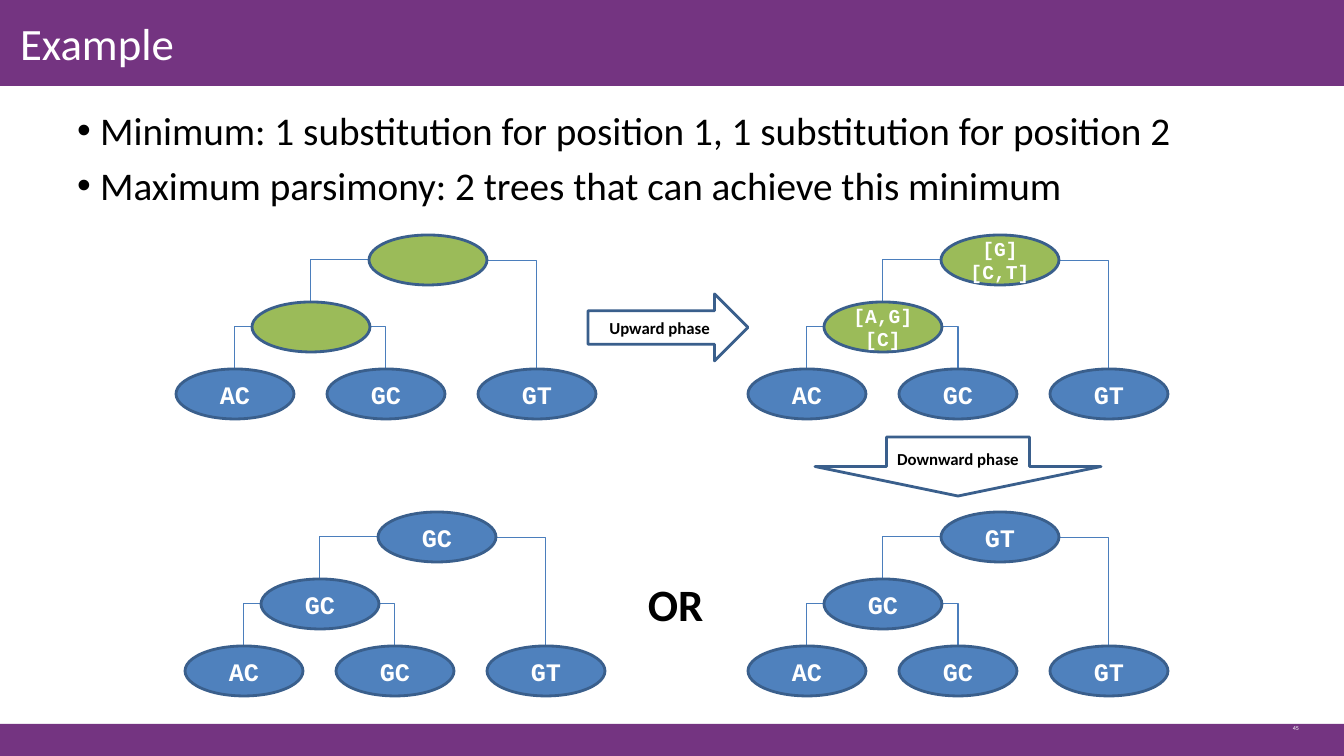
"""Builds the parsimony example slide with four trees and two phase arrows."""
from lxml import etree
from pptx import Presentation
from pptx.dml.color import RGBColor
from pptx.enum.shapes import MSO_CONNECTOR, MSO_SHAPE
from pptx.enum.text import MSO_ANCHOR, MSO_AUTO_SIZE, PP_ALIGN
from pptx.oxml.ns import qn
from pptx.util import Emu, Pt

RECT, OVAL = MSO_SHAPE.RECTANGLE, MSO_SHAPE.OVAL
RIGHT_ARROW, DOWN_ARROW = MSO_SHAPE.RIGHT_ARROW, MSO_SHAPE.DOWN_ARROW
ELBOW = MSO_CONNECTOR.ELBOW
MIDDLE, TOP = MSO_ANCHOR.MIDDLE, MSO_ANCHOR.TOP
LEFT, CENTER = PP_ALIGN.LEFT, PP_ALIGN.CENTER
NO_FIT = MSO_AUTO_SIZE.NONE

PX = 914400 / 100.8
WIDTH, HEIGHT = 1344, 756
NODE_W, NODE_H = 118, 50
LEAF_STEP, LEVEL_STEP = 151, 67
INNER_X, ROOT_X = 76, 193
PURPLE, BLUE, GREEN = "743481", "4F81BD", "9BBB59"
OUTLINE, BRANCH = "3A5F8C", "4B7EBC"
WHITE, BLACK = "FFFFFF", "000000"
SANS, MONO = "Calibri", "Courier New"
LEAVES = ["AC", "GC", "GT"]
BULLETS = [
    "Minimum: 1 substitution for position 1, 1 substitution for position 2",
    "Maximum parsimony: 2 trees that can achieve this minimum",
]


def px(n):
    """Turn pixels into EMU."""
    return Emu(round(n * PX))


def color(value):
    """Turn a hex string into a colour."""
    return RGBColor.from_string(value)


def place(sp, x, y, w, h):
    """Move and size a shape."""
    sp.left, sp.top, sp.width, sp.height = px(x), px(y), px(w), px(h)


def add_run(p, text, size, fill, font=SANS, bold=False):
    """Add one formatted run to a paragraph."""
    r = p.add_run()
    r.text = text
    r.font.name, r.font.size, r.font.bold = font, Pt(size), bold
    r.font.color.rgb = color(fill)


def add_band(slide, y, h):
    """Draw a full-width purple band behind everything else."""
    sp = slide.shapes.add_shape(RECT, 0, px(y), px(WIDTH), px(h))
    sp.shadow.inherit = False
    sp.fill.solid()
    sp.fill.fore_color.rgb = color(PURPLE)
    sp.line.fill.background()
    slide.shapes._spTree.insert(2, sp._element)


def add_title(slide, text):
    """Fill the title placeholder."""
    sp = slide.shapes.title
    place(sp, 0, -1, 1050, 87)
    tf = sp.text_frame
    tf.auto_size, tf.vertical_anchor, tf.margin_left = NO_FIT, MIDDLE, px(20)
    p = tf.paragraphs[0]
    p.alignment = LEFT
    add_run(p, text, 32, WHITE)


def add_bullets(slide, items):
    """Fill the body placeholder with a bulleted list."""
    sp = slide.placeholders[1]
    place(sp, 67, 101, 1210, 557)
    tf = sp.text_frame
    tf.auto_size, tf.vertical_anchor = NO_FIT, TOP
    for i, item in enumerate(items):
        p = tf.add_paragraph() if i else tf.paragraphs[0]
        pPr = p._p.get_or_add_pPr()
        pPr.set("marL", str(px(23)))
        pPr.set("indent", str(px(-23)))
        etree.SubElement(pPr, qn("a:buChar")).set("char", "•")
        p.space_before = Pt(5.6 if i else 0)
        add_run(p, item, 28, BLACK)


def add_label(slide, text, x, y, w, h, size, fill, bold=False, wrap=False):
    """Add a plain text box."""
    tf = slide.shapes.add_textbox(px(x), px(y), px(w), px(h)).text_frame
    tf.word_wrap = wrap
    add_run(tf.paragraphs[0], text, size, fill, bold=bold)


def add_outlined(slide, kind, x, y, w, h):
    """Add an outlined shape and return it with its centred paragraph."""
    sp = slide.shapes.add_shape(kind, px(x), px(y), px(w), px(h))
    sp.shadow.inherit = False
    sp.line.color.rgb, sp.line.width = color(OUTLINE), Pt(2)
    tf = sp.text_frame
    tf.margin_left = tf.margin_right = tf.margin_top = tf.margin_bottom = 0
    tf.word_wrap, tf.vertical_anchor = True, MIDDLE
    p = tf.paragraphs[0]
    p.alignment = CENTER
    return sp, p


def add_arrow(slide, kind, text, x, y, w, h):
    """Add a hollow phase arrow."""
    sp, p = add_outlined(slide, kind, x, y, w, h)
    sp.fill.background()
    add_run(p, text, 12, BLACK, bold=True)


def add_node(slide, lines, x, y, fill, size):
    """Add a tree node with its lines of text."""
    sp, p = add_outlined(slide, OVAL, x, y, NODE_W, NODE_H)
    sp.fill.solid()
    sp.fill.fore_color.rgb = color(fill)
    for i, line in enumerate(lines):
        if i:
            p.add_line_break()
        add_run(p, line, size, WHITE, MONO, True)


def add_branch(slide, x1, y1, x2, y2):
    """Add an elbow that runs sideways and then down."""
    c = slide.shapes.add_connector(ELBOW, px(x1), px(y1), px(x2), px(y2))
    c.line.color.rgb, c.line.width = color(BRANCH), Pt(0.75)
    spPr = c._element.spPr
    spPr.find(qn("a:prstGeom")).set("prst", "bentConnector2")
    etree.SubElement(spPr, qn("a:effectLst"))


def add_tree(slide, x, y, root, inner, fill=BLUE, size=18):
    """Draw a three-leaf tree from its left edge and root top."""
    leaf_xs = [x + i * LEAF_STEP for i in range(len(LEAVES))]
    inner_x, root_x = x + INNER_X, x + ROOT_X
    inner_y, leaf_y = y + LEVEL_STEP, y + 2 * LEVEL_STEP
    forks = [
        (inner_x, inner_y, leaf_xs[0], leaf_y, leaf_xs[1], leaf_y),
        (root_x, y, inner_x, inner_y, leaf_xs[2], leaf_y),
    ]
    for px_, py_, left_x, left_y, right_x, right_y in forks:
        mid = py_ + NODE_H / 2
        add_branch(slide, px_, mid, left_x + NODE_W / 2, left_y)
        add_branch(slide, px_ + NODE_W, mid, right_x + NODE_W / 2, right_y)
    for leaf_x, leaf in zip(leaf_xs, LEAVES):
        add_node(slide, [leaf], leaf_x, leaf_y, BLUE, 18)
    add_node(slide, inner, inner_x, inner_y, fill, size)
    add_node(slide, root, root_x, y, fill, size)


def main():
    """Build and save the slide."""
    prs = Presentation()
    prs.slide_width, prs.slide_height = px(WIDTH), px(HEIGHT)
    slide = prs.slides.add_slide(prs.slide_layouts[1])
    add_band(slide, -1, 87)
    add_band(slide, 724, 33)
    add_title(slide, "Example")
    add_bullets(slide, BULLETS)
    add_label(slide, "45", 1283, 720, 66, 40, 4.3, WHITE, wrap=True)
    add_tree(slide, 176, 235, [], [], GREEN)
    add_arrow(slide, RIGHT_ARROW, "Upward phase", 588, 294, 160, 67)
    add_tree(slide, 748, 235, ["[G]", "[C,T]"], ["[A,G]", "[C]"], GREEN, 14)
    add_arrow(slide, DOWN_ARROW, "Downward phase", 815, 437, 286, 59)
    add_tree(slide, 185, 512, ["GC"], ["GC"])
    add_label(slide, "OR", 638, 572, 77, 65, 32, BLACK, bold=True)
    add_tree(slide, 748, 512, ["GT"], ["GC"])
    prs.save("out.pptx")


if __name__ == "__main__":
    main()
